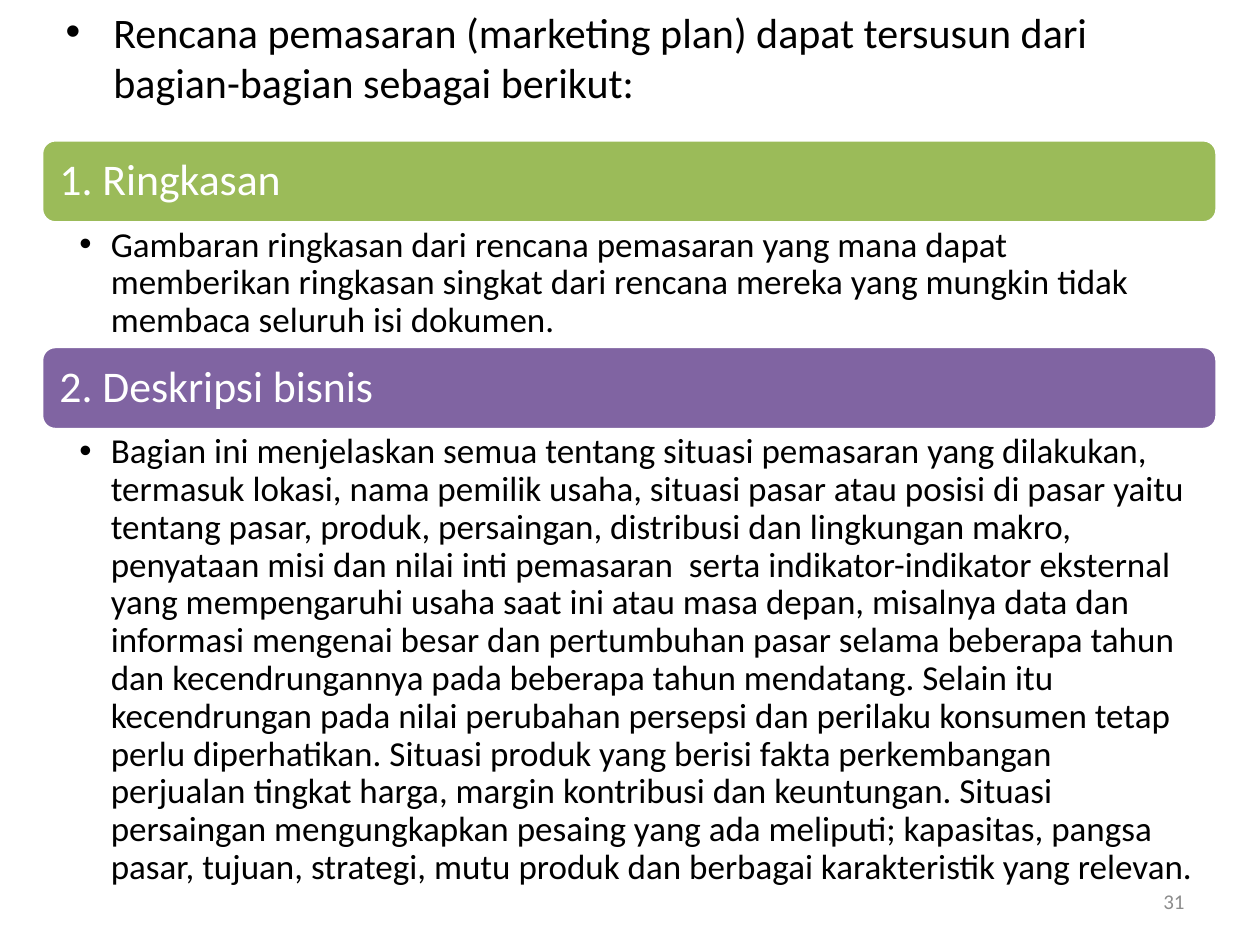
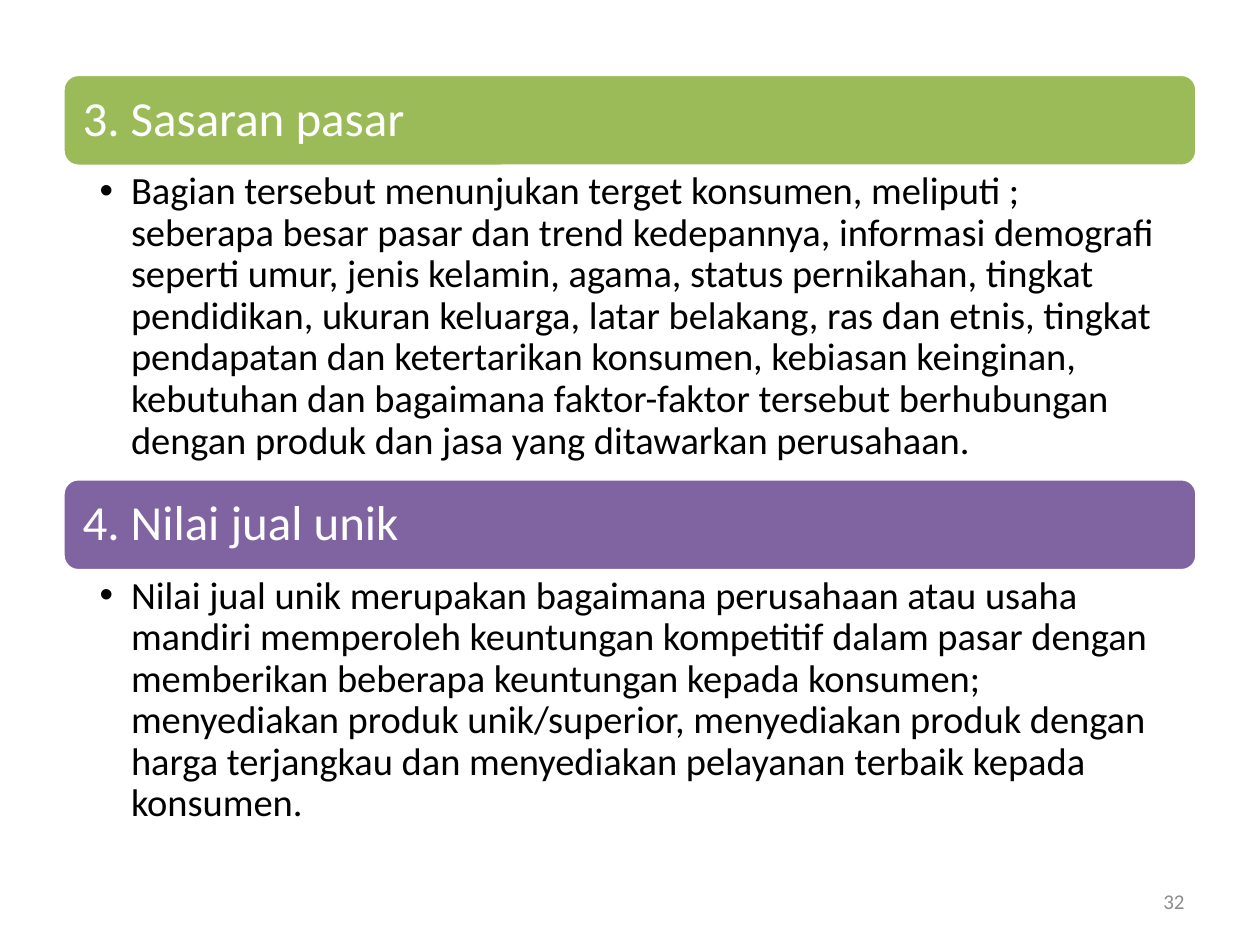
from lxml import etree
from pptx import Presentation
from pptx.dml.color import RGBColor
from pptx.enum.shapes import MSO_SHAPE
from pptx.enum.text import MSO_ANCHOR, MSO_AUTO_SIZE, PP_ALIGN
from pptx.oxml.ns import qn
from pptx.util import Inches, Pt

ROUNDED = MSO_SHAPE.ROUNDED_RECTANGLE
TOP, MIDDLE = MSO_ANCHOR.TOP, MSO_ANCHOR.MIDDLE
LEFT, RIGHT = PP_ALIGN.LEFT, PP_ALIGN.RIGHT
NO_AUTOFIT = MSO_AUTO_SIZE.NONE

FONT = "Calibri"
BLACK, WHITE, GREY = "000000", "FFFFFF", "8C8C8C"
BAND_COLORS = ("9BBB59", "8064A2")
FIRST_NUMBER = 31
CONTENT_LAYOUT, BLANK_LAYOUT = 1, 6

SLIDES = [
    {
        "intro": "Rencana pemasaran (marketing plan) dapat tersusun dari bagian-bagian sebagai berikut:",
        "left": 0.33, "top": 1.11, "width": 9.33, "band_height": 0.66,
        "heading_size": 25, "detail_size": 20,
        "heading_inset": 0.11, "detail_insets": (0.3, 0.03, 0.19, 0.03),
        "sections": [
            ("1. Ringkasan", 0.98, [
                "Gambaran ringkasan dari rencana pemasaran yang mana dapat memberikan ringkasan "
                "singkat dari rencana mereka yang mungkin tidak membaca seluruh isi dokumen.",
            ]),
            ("2. Deskripsi bisnis", 3.74, [
                "Bagian ini menjelaskan semua tentang situasi pemasaran yang dilakukan, termasuk "
                "lokasi, nama pemilik usaha, situasi pasar atau posisi di pasar yaitu tentang "
                "pasar, produk, persaingan, distribusi dan lingkungan makro, penyataan misi dan "
                "nilai inti pemasaran  serta indikator-indikator eksternal yang mempengaruhi usaha "
                "saat ini atau masa depan, misalnya data dan informasi mengenai besar dan "
                "pertumbuhan pasar selama beberapa tahun dan kecendrungannya pada beberapa tahun "
                "mendatang.",
                "Selain itu kecendrungan pada nilai perubahan persepsi dan perilaku konsumen tetap "
                "perlu diperhatikan.",
                "Situasi produk yang berisi fakta perkembangan perjualan tingkat harga, margin "
                "kontribusi dan keuntungan.",
                "Situasi persaingan mengungkapkan pesaing yang ada meliputi; kapasitas, pangsa "
                "pasar, tujuan, strategi, mutu produk dan berbagai karakteristik yang relevan.",
            ]),
        ],
    },
    {
        "intro": None,
        "left": 0.5, "top": 0.59, "width": 9, "band_height": 0.73,
        "heading_size": 28, "detail_size": 22,
        "heading_inset": 0.12, "detail_insets": (0.29, 0.04, 0.22, 0.04),
        "sections": [
            ("3. Sasaran pasar", 2.48, [
                "Bagian tersebut menunjukan terget konsumen, meliputi ; seberapa besar pasar dan "
                "trend kedepannya, informasi demografi seperti umur, jenis kelamin, agama, status "
                "pernikahan, tingkat pendidikan, ukuran keluarga, latar belakang, ras dan etnis, "
                "tingkat pendapatan dan ketertarikan konsumen, kebiasan keinginan, kebutuhan dan "
                "bagaimana faktor-faktor tersebut berhubungan dengan produk dan jasa yang "
                "ditawarkan perusahaan.",
            ]),
            ("4. Nilai jual unik", 2.16, [
                "Nilai jual unik merupakan bagaimana perusahaan atau usaha mandiri memperoleh "
                "keuntungan kompetitif dalam pasar dengan memberikan beberapa keuntungan kepada "
                "konsumen; menyediakan produk unik/superior, menyediakan produk dengan harga "
                "terjangkau dan menyediakan pelayanan terbaik kepada konsumen.",
            ]),
        ],
    },
]


def rgb(color):
    return RGBColor.from_string(color)


def write(holder, text, size, color=BLACK, align=LEFT, anchor=TOP,
          insets=(0.1, 0.05, 0.1, 0.05), line_spacing=None, hanging=None):
    frame = holder.text_frame
    frame.word_wrap = True
    frame.auto_size = NO_AUTOFIT
    frame.vertical_anchor = anchor
    (frame.margin_left, frame.margin_top,
     frame.margin_right, frame.margin_bottom) = map(Inches, insets)
    paragraph = frame.paragraphs[0]
    paragraph.alignment = align
    if line_spacing:
        paragraph.line_spacing = line_spacing
    run = paragraph.add_run()
    run.text = text
    run.font.name = FONT
    run.font.size = Pt(size)
    run.font.color.rgb = rgb(color)
    if hanging:
        properties = paragraph._p.get_or_add_pPr()
        properties.set("marL", str(Inches(hanging)))
        properties.set("indent", str(-Inches(hanging)))
        etree.SubElement(properties, qn("a:buFont")).set("typeface", "Arial")
        etree.SubElement(properties, qn("a:buChar")).set("char", "•")
    return run


def add_intro(slide, text):
    slide.shapes._spTree.remove(slide.shapes.title._element)
    body = slide.placeholders[1]
    body.left, body.top, body.width, body.height = map(Inches, (0.42, 0, 9, 4.95))
    write(body, text, 24, hanging=0.38)


def add_sections(slide, content):
    left, width = Inches(content["left"]), Inches(content["width"])
    band_height = content["band_height"]
    top = content["top"]
    for color, (heading, detail_height, sentences) in zip(BAND_COLORS, content["sections"]):
        band = slide.shapes.add_shape(ROUNDED, left, Inches(top), width, Inches(band_height))
        band.shadow.inherit = False
        band.fill.solid()
        band.fill.fore_color.rgb = rgb(color)
        band.line.color.rgb = rgb(WHITE)
        band.line.width = Pt(2)
        write(band, heading, content["heading_size"], color=WHITE, anchor=MIDDLE,
              insets=(content["heading_inset"],) * 4, line_spacing=0.9)
        top += band_height
        detail = slide.shapes.add_textbox(left, Inches(top), width, Inches(detail_height))
        write(detail, " ".join(sentences), content["detail_size"],
              insets=content["detail_insets"], line_spacing=0.9, hanging=0.25)
        top += detail_height


def add_number(slide, number):
    footer = slide.shapes.add_textbox(*map(Inches, (7.17, 6.95, 2.33, 0.4)))
    run = write(footer, str(number), 12, color=GREY, align=RIGHT, anchor=MIDDLE)
    field = run._r
    field.tag = qn("a:fld")
    field.set("id", "{B6F15528-21DE-4FAA-801E-634DDDAF4B2B}")
    field.set("type", "slidenum")


def main():
    deck = Presentation()
    deck.slide_width, deck.slide_height = Inches(10), Inches(7.5)
    deck.element.set("firstSlideNum", str(FIRST_NUMBER))
    for number, content in enumerate(SLIDES, FIRST_NUMBER):
        layout = CONTENT_LAYOUT if content["intro"] else BLANK_LAYOUT
        slide = deck.slides.add_slide(deck.slide_layouts[layout])
        if content["intro"]:
            add_intro(slide, content["intro"])
        add_sections(slide, content)
        add_number(slide, number)
    deck.save("out.pptx")


if __name__ == "__main__":
    main()
